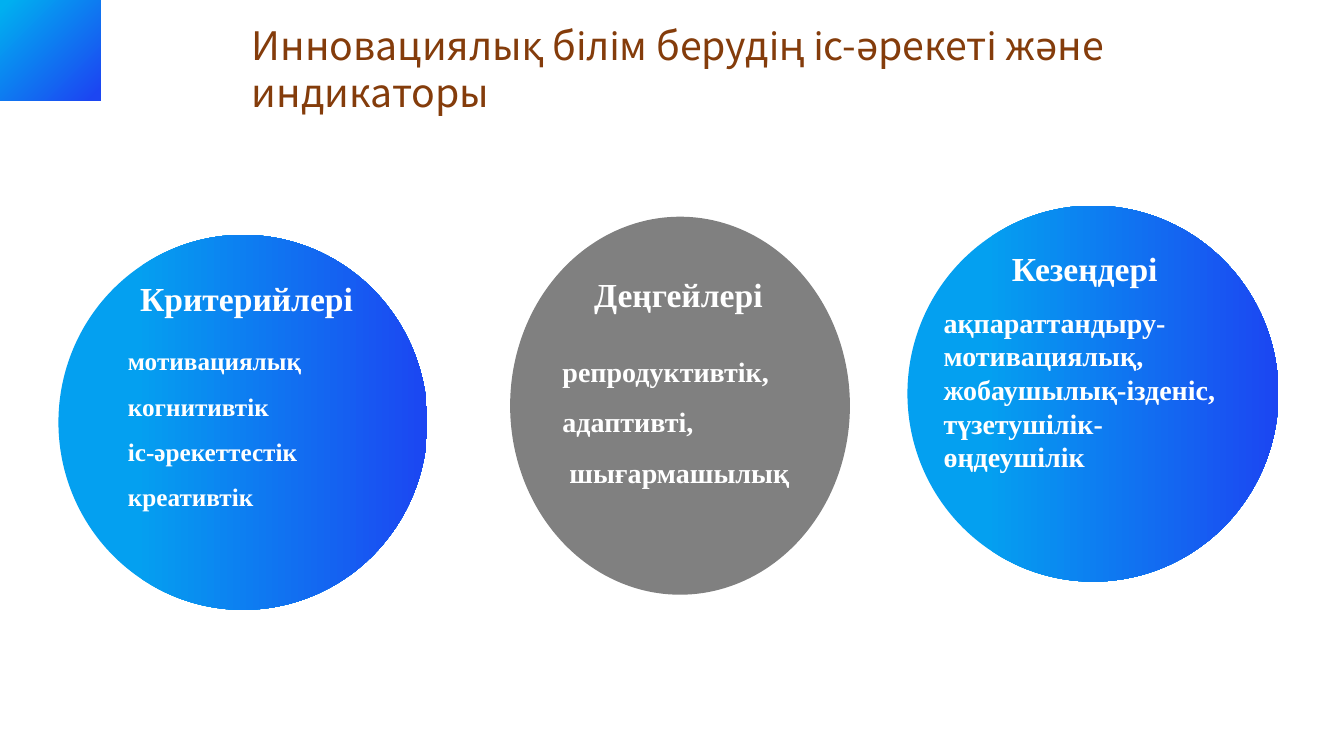
from math import acos, asin, cos, pi, sin

from pptx import Presentation
from pptx.dml.color import RGBColor
from pptx.enum.shapes import MSO_SHAPE
from pptx.enum.text import PP_ALIGN
from pptx.util import Inches, Pt

OVAL = MSO_SHAPE.OVAL
LEFT, CENTER = PP_ALIGN.LEFT, PP_ALIGN.CENTER

COLORS = {"title": "843C0B", "text": "FFFFFF", "gray": "808080",
          "sky": "04A0F0", "cyan": "00B0F0", "blue": "1C46F2"}
TITLE_FONT, BODY_FONT = "Noto Sans CJK SC", "Times New Roman"

TITLE = "Инновациялық білім берудің іс-әрекеті және индикаторы"
TITLE_BOX = (2.4, 0.16, 9.92, 1.04)

# Boxes are left, top, width, height in inches
CIRCLES = [
    {"box": (0.58, 2.33, 3.66, 3.72), "gradient": True,
     "heading": "Критерийлері", "heading_box": (1.25, 2.71, 2.39, 0.5),
     "items": ["мотивациялық", "когнитивтік", "іс-әрекеттестік", "креативтік"],
     "items_box": (1.17, 3.23, 2.61, 2.37), "size": 18, "spacing": 1.5},
    {"box": (5.06, 2.15, 3.37, 3.75), "gradient": False,
     "heading": "Деңгейлері ", "heading_box": (5.73, 2.67, 2.08, 0.5),
     "items": ["репродуктивтік,", "адаптивті,", " шығармашылық"],
     "items_box": (5.48, 3.3, 2.62, 1.62), "size": 20, "spacing": 1.5},
    {"box": (9, 2.04, 3.68, 3.73), "gradient": True,
     "heading": "Кезеңдері", "heading_box": (9.43, 2.41, 2.66, 0.58),
     "items": ["ақпараттандыру-мотивациялық,", "жобаушылық-ізденіс,",
               "түзетушілік- өңдеушілік"],
     "items_box": (9.26, 2.98, 3.1, 1.78), "size": 20, "spacing": 1},
]

RING_X, RING_Y = 0.12, 0.04
RING_OUTER, RING_INNER = 0.48, 0.32
ARC_STEPS = 40


def rgb(name):
    return RGBColor.from_string(COLORS[name])


def inches(box):
    return [Inches(v) for v in box]


def fill_gradient(shape, stops, angle):
    """Fill with two (position, colour) stops; the angle is counterclockwise."""
    shape.fill.gradient()
    shape.fill.gradient_angle = angle
    for stop, (position, color) in zip(shape.fill.gradient_stops, stops):
        stop.position = position
        stop.color.rgb = rgb(color)


def add_text(s, box, lines, size, font=BODY_FONT, color="text", bold=True,
             align=LEFT, spacing=1):
    tf = s.shapes.add_textbox(*inches(box)).text_frame
    tf.word_wrap = True
    for i, line in enumerate(lines):
        p = tf.add_paragraph() if i else tf.paragraphs[0]
        p.text = line
        p.alignment = align
        p.line_spacing = float(spacing)
        p.font.name = font
        p.font.size = Pt(size)
        p.font.bold = bold
        p.font.color.rgb = rgb(color)


def ring_arc(radius):
    """Points of the arc from the slide's top edge to its left edge."""
    start, end = -asin(RING_Y / radius), pi - acos(RING_X / radius)
    angles = [start + (end - start) * i / ARC_STEPS for i in range(ARC_STEPS + 1)]
    return [(RING_X + radius * cos(a), RING_Y + radius * sin(a)) for a in angles]


def add_corner_ring(s):
    points = ring_arc(RING_OUTER) + ring_arc(RING_INNER)[::-1]
    builder = s.shapes.build_freeform(*points[0], scale=float(Inches(1)))
    builder.add_line_segments(points[1:], close=True)
    ring = builder.convert_to_shape()
    ring.shadow.inherit = False
    ring.line.fill.background()
    fill_gradient(ring, [(0.04, "cyan"), (0.95, "blue")], 315)


def add_circle(s, circle):
    sp = s.shapes.add_shape(OVAL, *inches(circle["box"]))
    sp.shadow.inherit = False
    sp.line.fill.background()
    if circle["gradient"]:
        fill_gradient(sp, [(0.21, "sky"), (1, "blue")], 0)
    else:
        sp.fill.solid()
        sp.fill.fore_color.rgb = rgb("gray")
    add_text(s, circle["heading_box"], [circle["heading"]], 24, align=CENTER)
    add_text(s, circle["items_box"], circle["items"], circle["size"],
             spacing=circle["spacing"])


def main():
    prs = Presentation()
    prs.slide_width, prs.slide_height = Inches(13.33), Inches(7.5)
    s = prs.slides.add_slide(prs.slide_layouts[6])
    add_corner_ring(s)
    for circle in CIRCLES:
        add_circle(s, circle)
    add_text(s, TITLE_BOX, [TITLE], 28, TITLE_FONT, "title", bold=False)
    prs.save("out.pptx")


if __name__ == "__main__":
    main()
